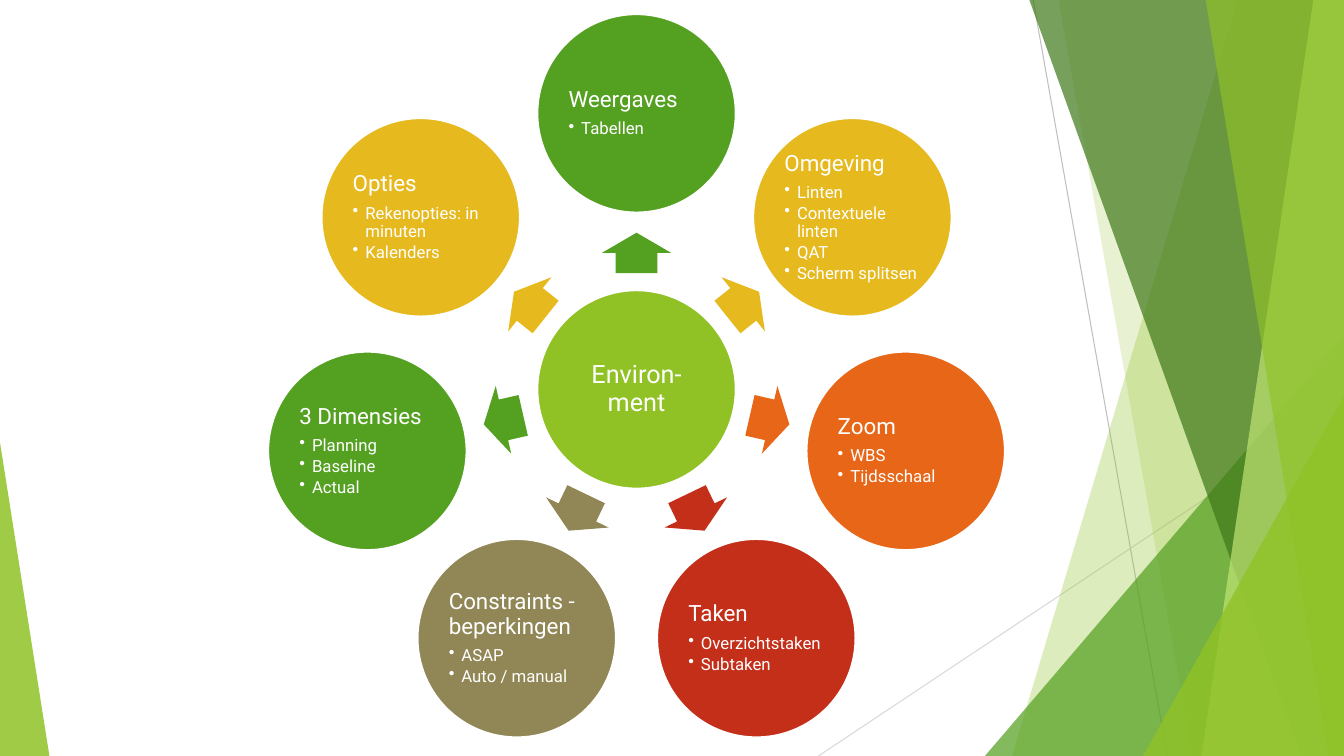
"""Build a radial slide: one hub circle and seven topic circles on a faceted background."""
from math import cos, radians, sin

from lxml import etree
from pptx import Presentation
from pptx.dml.color import RGBColor
from pptx.enum.shapes import MSO_CONNECTOR, MSO_SHAPE
from pptx.enum.text import MSO_ANCHOR, PP_ALIGN
from pptx.oxml.ns import qn
from pptx.util import Pt

OVAL, ARROW, TRIANGLE = MSO_SHAPE.OVAL, MSO_SHAPE.RIGHT_ARROW, MSO_SHAPE.ISOSCELES_TRIANGLE
STRAIGHT = MSO_CONNECTOR.STRAIGHT
MIDDLE = MSO_ANCHOR.MIDDLE
LEFT, CENTER = PP_ALIGN.LEFT, PP_ALIGN.CENTER

WHITE = RGBColor(0xFF, 0xFF, 0xFF)
GREY = RGBColor(0xBF, 0xBF, 0xBF)
LIGHT_GREY = RGBColor(0xD9, 0xD9, 0xD9)
LIME = RGBColor(0x90, 0xC2, 0x26)
PALE_LIME = RGBColor(0xC0, 0xE4, 0x74)
GREEN = RGBColor(0x54, 0xA0, 0x21)
DARK_GREEN = RGBColor(0x3F, 0x78, 0x19)
YELLOW = RGBColor(0xE6, 0xB9, 0x1E)
ORANGE = RGBColor(0xE7, 0x66, 0x18)
RED = RGBColor(0xC4, 0x2F, 0x1A)
OLIVE = RGBColor(0x91, 0x86, 0x55)

WIDTH, HEIGHT = 960, 540
HUB_X, HUB_Y = 454.7, 278.2
TOPIC_RADIUS, ARROW_RADIUS = 197.2, 97.5
DIAMETER = 141.8
ARROW_W, ARROW_H = 28.9, 49.6

TOPICS = [
    ("Weergaves", GREEN, ["Tabellen"]),
    ("Omgeving", YELLOW, ["Linten", "Contextuele linten", "QAT", "Scherm splitsen"]),
    ("Zoom", ORANGE, ["WBS", "Tijdsschaal"]),
    ("Taken", RED, ["Overzichtstaken", "Subtaken"]),
    ("Constraints - beperkingen", OLIVE, ["ASAP", "Auto / manual"]),
    ("3 Dimensies", GREEN, ["Planning", "Baseline", "Actual"]),
    ("Opties", YELLOW, ["Rekenopties: in minuten", "Kalenders"]),
]


def write(tf, text, size=12, font="Roboto", color=WHITE, align=LEFT, after=0, bullet=False):
    """Add one formatted paragraph to a text frame."""
    p = tf.add_paragraph() if tf.text else tf.paragraphs[0]
    p.alignment = align
    p.line_spacing = 0.9
    p.space_after = Pt(after)
    if bullet:
        p.level = 1
        pPr = p._p.get_or_add_pPr()
        pPr.set("marL", str(Pt(9)))
        pPr.set("indent", str(-Pt(9)))
        etree.SubElement(pPr, qn("a:buChar")).set("char", "•")
    r = p.add_run()
    r.text = text
    r.font.size = Pt(size)
    r.font.name = font
    r.font.color.rgb = color


class Deck:
    """Hold the current slide and draw its elements in points."""

    def __init__(self, slide):
        self.shapes = slide.shapes

    def paint(self, sp, color, opacity=100):
        """Give a shape a flat fill without outline or shadow."""
        sp.shadow.inherit = False
        sp.fill.solid()
        sp.fill.fore_color.rgb = color
        sp.line.fill.background()
        if opacity < 100:
            clr = sp.fill._xPr.find(qn("a:solidFill"))[0]
            etree.SubElement(clr, qn("a:alpha")).set("val", str(opacity * 1000))

    def line(self, x1, y1, x2, y2, color):
        """Draw a thin straight line."""
        cx = self.shapes.add_connector(STRAIGHT, Pt(x1), Pt(y1), Pt(x2), Pt(y2))
        cx.line.color.rgb = color
        cx.line.width = Pt(0.75)
        etree.SubElement(cx._element.spPr, qn("a:effectLst"))

    def band(self, top_x, bottom_x, color, opacity):
        """Draw a full-height band from a slanted edge to the right slide edge."""
        top = -0.6
        fb = self.shapes.build_freeform(Pt(top_x), Pt(top), scale=1.0)
        corners = [(WIDTH, top), (WIDTH, HEIGHT), (bottom_x, HEIGHT)]
        fb.add_line_segments([(Pt(x), Pt(y)) for x, y in corners], close=True)
        self.paint(fb.convert_to_shape(), color, opacity)

    def triangle(self, x, y, w, apex, color, opacity):
        """Draw a triangle that stands on the bottom slide edge."""
        sp = self.shapes.add_shape(TRIANGLE, Pt(x), Pt(y), Pt(w), Pt(HEIGHT - y))
        sp.adjustments[0] = apex
        self.paint(sp, color, opacity)

    def arrow(self, x, y, angle, color):
        """Draw a block arrow centred on a point."""
        sp = self.shapes.add_shape(ARROW, Pt(x - ARROW_W / 2), Pt(y - ARROW_H / 2),
                                   Pt(ARROW_W), Pt(ARROW_H))
        sp.adjustments[0] = 0.6
        sp.adjustments[1] = 0.5
        sp.rotation = angle
        self.paint(sp, color)

    def circle(self, x, y, color, inset):
        """Draw a circle centred on a point and return its text frame."""
        sp = self.shapes.add_shape(OVAL, Pt(x - DIAMETER / 2), Pt(y - DIAMETER / 2),
                                   Pt(DIAMETER), Pt(DIAMETER))
        self.paint(sp, color)
        sp.line.color.rgb = WHITE
        sp.line.width = Pt(1.5)
        tf = sp.text_frame
        tf.word_wrap = True
        tf.vertical_anchor = MIDDLE
        tf.margin_left = tf.margin_right = tf.margin_top = tf.margin_bottom = Pt(inset)
        return tf


def draw_background(deck):
    """Draw the translucent facets on both sides."""
    deck.line(738, 0, 833.8, HEIGHT, GREY)
    deck.line(WIDTH, 290.2, 584.6, HEIGHT, LIGHT_GREY)
    deck.band(884.2, 722.9, LIME, 30)
    deck.band(756, 851.8, LIME, 20)
    deck.triangle(703.5, 240, 256.5, 1, GREEN, 72)
    deck.band(735.1, 929.5, DARK_GREEN, 70)
    deck.band(938.2, 858.2, PALE_LIME, 70)
    deck.band(861.1, 949, LIME, 65)
    deck.triangle(816.5, 283, 143.5, 1, LIME, 80)
    deck.triangle(0, 316.1, 35.3, 0, LIME, 85)


def draw_wheel(deck):
    """Draw the hub and its ring of topics, clockwise from the top."""
    tf = deck.circle(HUB_X, HUB_Y, LIME, 2)
    write(tf, "Environ-ment", size=18, align=CENTER, after=6.3)
    for i, (title, color, items) in enumerate(TOPICS):
        angle = 360 * i / len(TOPICS) - 90
        dx, dy = cos(radians(angle)), sin(radians(angle))
        deck.arrow(HUB_X + ARROW_RADIUS * dx, HUB_Y + ARROW_RADIUS * dy, angle, color)
        tf = deck.circle(HUB_X + TOPIC_RADIUS * dx, HUB_Y + TOPIC_RADIUS * dy, color, 1.6)
        write(tf, title, size=16, after=5.6)
        for item in items:
            write(tf, item, after=2, bullet=True)


def main():
    """Create and save the presentation."""
    prs = Presentation()
    prs.slide_width, prs.slide_height = Pt(WIDTH), Pt(HEIGHT)
    deck = Deck(prs.slides.add_slide(prs.slide_layouts[6]))
    draw_background(deck)
    draw_wheel(deck)
    prs.save("out.pptx")


if __name__ == "__main__":
    main()
